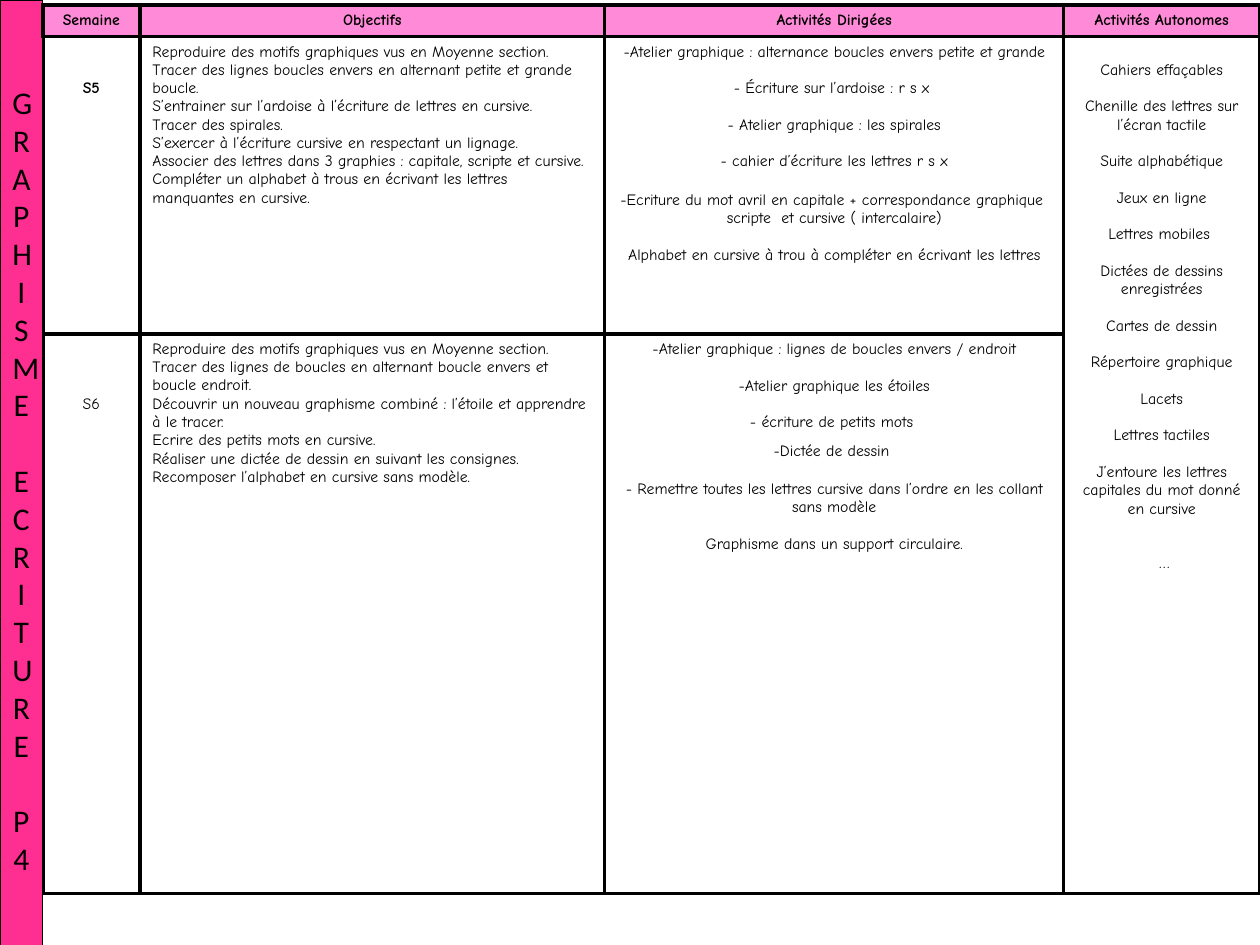
from pptx import Presentation
from pptx.dml.color import RGBColor
from pptx.enum.shapes import MSO_SHAPE
from pptx.enum.text import MSO_ANCHOR, PP_ALIGN
from pptx.oxml import parse_xml
from pptx.oxml.ns import nsdecls
from pptx.util import Inches, Pt

COLORS = {"ink": "000000", "side": "FF2F92", "head": "FF8AD8"}
COLS = [0.77, 3.69, 3.64, 1.56]
LINE = 10.45  # height of one 9 pt line, in points
SMALL = 5.8   # height of one 5 pt line, in points

HEADS = ["Semaine", "Objectifs", "Activités Dirigées", "Activités Autonomes"]
GOALS = [
    [
        "Reproduire des motifs graphiques vus en Moyenne section.",
        "Tracer des lignes boucles envers en alternant petite et grande boucle.",
        "S’entrainer sur l’ardoise à l’écriture de lettres en cursive.",
        "Tracer des spirales.",
        "S’exercer à l’écriture cursive en respectant un lignage.",
        "Associer des lettres dans 3 graphies : capitale, scripte et cursive.",
        "Compléter un alphabet à trous en écrivant les lettres manquantes en cursive.",
    ],
    [
        "Reproduire des motifs graphiques vus en Moyenne section.",
        "Tracer des lignes de boucles en alternant boucle envers et boucle endroit.",
        "Découvrir un nouveau graphisme combiné : l’étoile et apprendre à le tracer.",
        "Ecrire des petits mots en cursive.",
        "Réaliser une dictée de dessin en suivant les consignes.",
        "Recomposer l’alphabet en cursive sans modèle.",
    ],
]
GUIDED = [
    [
        "-Atelier graphique : alternance boucles envers petite et grande",
        "- Écriture sur l’ardoise : r s x ",
        "- Atelier graphique : les spirales",
        "- cahier d’écriture les lettres r s x",
        "-Ecriture du mot avril en capitale + correspondance graphique  scripte  et cursive ( intercalaire)",
        "Alphabet en cursive à trou à compléter en écrivant les lettres",
    ],
    [
        "-Atelier graphique : lignes de boucles envers / endroit",
        "-Atelier graphique les étoiles",
        "- écriture de petits mots ",
        "-Dictée de dessin ",
        "- Remettre toutes les lettres cursive dans l’ordre en les collant sans modèle",
        "Graphisme dans un support circulaire.",
    ],
]
GUIDED_GAPS = [{4: 2 * SMALL}, {3: SMALL, 4: 2 * SMALL}]
SOLO = [
    "Cahiers effaçables",
    "Chenille des lettres sur l’écran tactile",
    "Suite alphabétique",
    "Jeux en ligne",
    "Lettres mobiles ",
    "Dictées de dessins enregistrées",
    "Cartes de dessin",
    "Répertoire graphique",
    "Lacets",
    "Lettres tactiles",
    "J’entoure les lettres capitales du mot donné en cursive",
    " …",
]
SIDE = ["G", "R", "A", "P", "H", "I", "S", "ME",
        "E", "C", "R", "I", "TU", "RE", "P", "4"]


def color(name):
    return RGBColor.from_string(COLORS[name])


def write(frame, lines, size=9, font="Comic Neue", bold=False,
          align=PP_ALIGN.CENTER, gap=0, gaps=None):
    """Fill a text frame; gaps overrides the space before chosen lines."""
    gaps = gaps or {}
    frame.word_wrap = True
    for i, line in enumerate(lines):
        para = frame.add_paragraph() if i else frame.paragraphs[0]
        para.alignment = align
        para.space_before = Pt(gaps.get(i, gap) if i else 0)
        run = para.add_run()
        run.text = line
        run.font.size = Pt(size)
        run.font.name = font
        run.font.bold = bold
        run.font.color.rgb = color("ink")


def edge(cell):
    props = cell._tc.get_or_add_tcPr()
    for side in "LRTB":
        props.append(parse_xml(
            f'<a:ln{side} {nsdecls("a")} w="{Pt(2.25)}"><a:solidFill>'
            f'<a:srgbClr val="{COLORS["ink"]}"/></a:solidFill></a:ln{side}>'))


def add_grid(slide, left, top, rows):
    """Add an empty black-lined table with the shared columns."""
    grid = slide.shapes.add_table(
        len(rows), len(COLS), Inches(left), Inches(top),
        Inches(sum(COLS)), Inches(sum(rows))).table
    grid.first_row = grid.horz_banding = False
    for col, width in zip(grid.columns, COLS):
        col.width = Inches(width)
    for row, height in zip(grid.rows, rows):
        row.height = Inches(height)
    for cell in grid.iter_cells():
        edge(cell)
        cell.fill.background()
    return grid


def lower(cell, count):
    """Start the cell's text a number of lines down."""
    cell.margin_top = Inches(0.05) + Pt(count * LINE)


def add_head(slide, left, top):
    grid = add_grid(slide, left, top, [0.25])
    for cell, label in zip(grid.iter_cells(), HEADS):
        cell.fill.solid()
        cell.fill.fore_color.rgb = color("head")
        write(cell.text_frame, [label], bold=True)


def add_plan(slide, left, top):
    grid = add_grid(slide, left, top, [2.36, 4.44])
    for i, week in enumerate(["S5", "S6"]):
        name, goal, guide = (grid.cell(i, j) for j in range(3))
        lower(name, 2 + i)
        write(name.text_frame, [week], bold=i == 0)
        write(goal.text_frame, GOALS[i], align=PP_ALIGN.LEFT)
        write(guide.text_frame, GUIDED[i], gap=LINE, gaps=GUIDED_GAPS[i])
    solo = grid.cell(0, 3)
    solo.merge(grid.cell(1, 3))
    lower(solo, 1)
    write(solo.text_frame, SOLO, gap=LINE, gaps={len(SOLO) - 1: 2 * LINE})


def add_side(slide, left, top, width, height):
    bar = slide.shapes.add_shape(
        MSO_SHAPE.RECTANGLE, Inches(left), Inches(top),
        Inches(width), Inches(height))
    bar.shadow.inherit = False
    bar.fill.solid()
    bar.fill.fore_color.rgb = color("side")
    bar.line.color.rgb = color("ink")
    bar.line.width = Pt(0.75)
    frame = bar.text_frame
    frame.vertical_anchor = MSO_ANCHOR.TOP
    frame.margin_top = Inches(0.66)
    write(frame, SIDE, size=18, font="Calibri", gaps={8: 21.6, 14: 21.6})


def main():
    deck = Presentation()
    deck.slide_width, deck.slide_height = Inches(10), Inches(7.5)
    slide = deck.slides.add_slide(deck.slide_layouts[6])
    add_plan(slide, 0.34, 0.29)
    add_side(slide, 0, 0, 0.34, 7.67)
    add_head(slide, 0.34, 0.04)
    deck.save("out.pptx")


if __name__ == "__main__":
    main()
